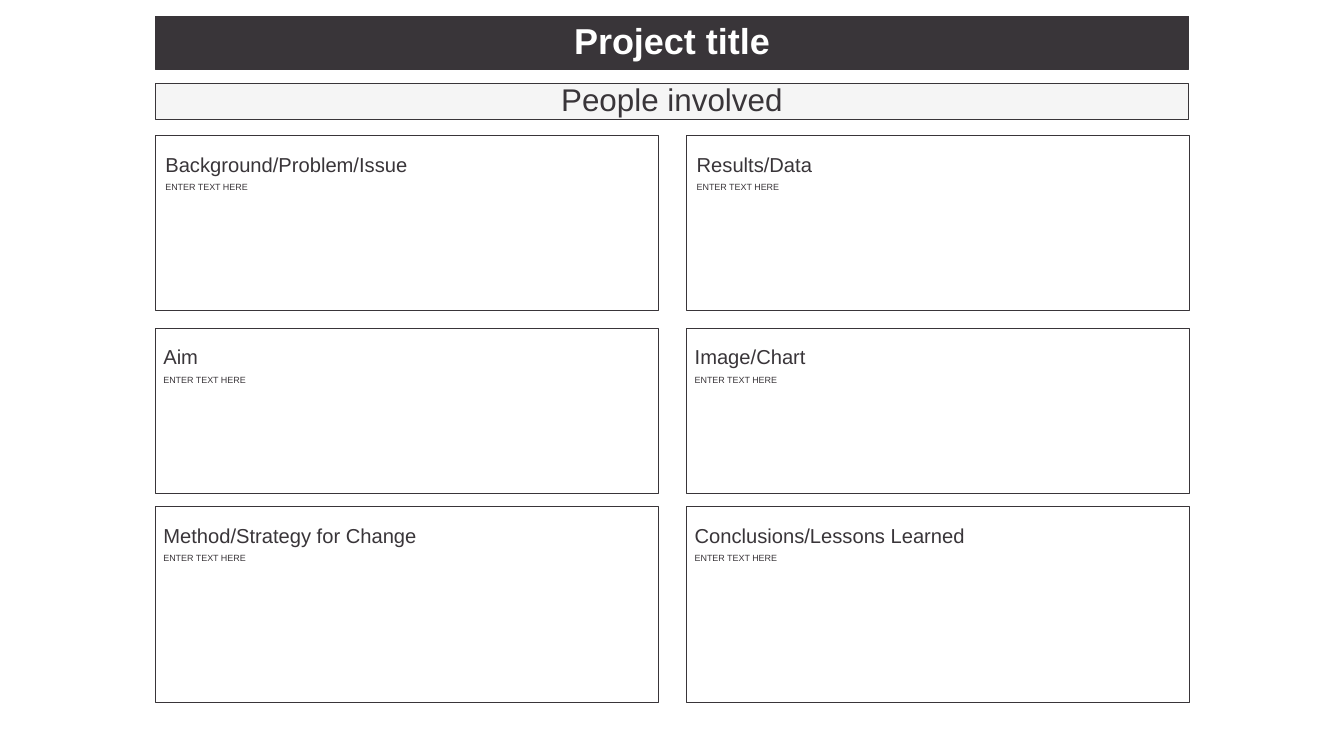
from dataclasses import dataclass

from pptx import Presentation
from pptx.dml.color import RGBColor
from pptx.enum.shapes import MSO_SHAPE as Shape
from pptx.enum.text import MSO_ANCHOR as Anchor, MSO_AUTO_SIZE as AutoSize, PP_ALIGN as Align
from pptx.oxml.ns import qn
from pptx.shapes.autoshape import Shape as SlideShape
from pptx.slide import Slide
from pptx.util import Inches, Pt


@dataclass(frozen=True)
class Theme:
    font: str = "Arial"
    dark: RGBColor = RGBColor(0x39, 0x35, 0x39)
    pale: RGBColor = RGBColor(0xF5, 0xF5, 0xF5)
    white: RGBColor = RGBColor(0xFF, 0xFF, 0xFF)
    title_size: float = 25.7
    people_size: float = 22.4
    heading_size: float = 14.4
    prompt_size: float = 6.4
    line_width: float = 0.75


@dataclass(frozen=True)
class Row:
    top: float
    height: float
    headings: tuple[str, str]
    in_placeholders: bool = False


THEME = Theme()
LEFT = 1.54
FULL_WIDTH = 10.25
PANEL_WIDTH = 4.99
COLUMN_STEP = 5.27
PROMPT = "ENTER TEXT HERE"
ROWS = (
    Row(1.34, 1.74, ("Background/Problem/Issue", "Results/Data"), in_placeholders=True),
    Row(3.26, 1.64, ("Aim", "Image/Chart")),
    Row(5.03, 1.94, ("Method/Strategy for Change", "Conclusions/Lessons Learned")),
)


def add_rectangle(slide: Slide) -> SlideShape:
    """Add a plain rectangle with the template's narrow text margins."""
    shape = slide.shapes.add_shape(Shape.RECTANGLE, 0, 0, Inches(1), Inches(1))
    shape.shadow.inherit = False
    frame = shape.text_frame
    frame.margin_left = frame.margin_right = Inches(0.08)
    frame.margin_top = frame.margin_bottom = Inches(0.04)
    return shape


def format_box(shape: SlideShape, left: float, top: float, width: float, height: float,
               fill: RGBColor, anchor: Anchor) -> None:
    shape.left, shape.top = Inches(left), Inches(top)
    shape.width, shape.height = Inches(width), Inches(height)
    shape.fill.solid()
    shape.fill.fore_color.rgb = fill
    shape.line.color.rgb = THEME.dark
    shape.line.width = Pt(THEME.line_width)
    frame = shape.text_frame
    frame.word_wrap = True
    frame.auto_size = AutoSize.NONE
    frame.vertical_anchor = anchor


def write_lines(shape: SlideShape, lines: list[tuple[str, float]], align: Align,
                spacing: float, color: RGBColor, bold: bool = False) -> None:
    """Write each (text, size) pair as an unbulleted paragraph."""
    frame = shape.text_frame
    for index, (text, size) in enumerate(lines):
        paragraph = frame.paragraphs[0] if index == 0 else frame.add_paragraph()
        properties = paragraph._p.get_or_add_pPr()
        properties.set("marL", "0")
        properties.set("indent", "0")
        properties.append(properties.makeelement(qn("a:buNone"), {}))
        paragraph.alignment = align
        paragraph.line_spacing = spacing
        paragraph.space_before = Pt(0)
        run = paragraph.add_run()
        run.text = text
        run.font.name = THEME.font
        run.font.size = Pt(size)
        run.font.bold = bold
        run.font.color.rgb = color


def add_banners(slide: Slide) -> None:
    title = slide.shapes.title
    format_box(title, LEFT, 0.16, FULL_WIDTH, 0.53, THEME.dark, Anchor.MIDDLE)
    write_lines(title, [("Project title", THEME.title_size)], Align.CENTER, 0.9,
                THEME.white, bold=True)
    people = add_rectangle(slide)
    format_box(people, LEFT, 0.83, FULL_WIDTH, 0.36, THEME.pale, Anchor.MIDDLE)
    write_lines(people, [("People involved", THEME.people_size)], Align.CENTER, 0.9, THEME.dark)


def add_row(slide: Slide, row: Row) -> None:
    for column, heading in enumerate(row.headings):
        if row.in_placeholders:
            panel = slide.placeholders[column + 1]
        else:
            panel = add_rectangle(slide)
        format_box(panel, LEFT + column * COLUMN_STEP, row.top, PANEL_WIDTH, row.height,
                   THEME.white, Anchor.TOP)
        write_lines(panel, [(heading, THEME.heading_size), (PROMPT, THEME.prompt_size)],
                    Align.LEFT, 1.5, THEME.dark)


def main() -> None:
    presentation = Presentation()
    presentation.slide_width, presentation.slide_height = Inches(13.33), Inches(7.5)
    two_content = presentation.slide_layouts[3]
    slide = presentation.slides.add_slide(two_content)
    add_banners(slide)
    for row in ROWS:
        add_row(slide, row)
    presentation.save("out.pptx")


if __name__ == "__main__":
    main()
